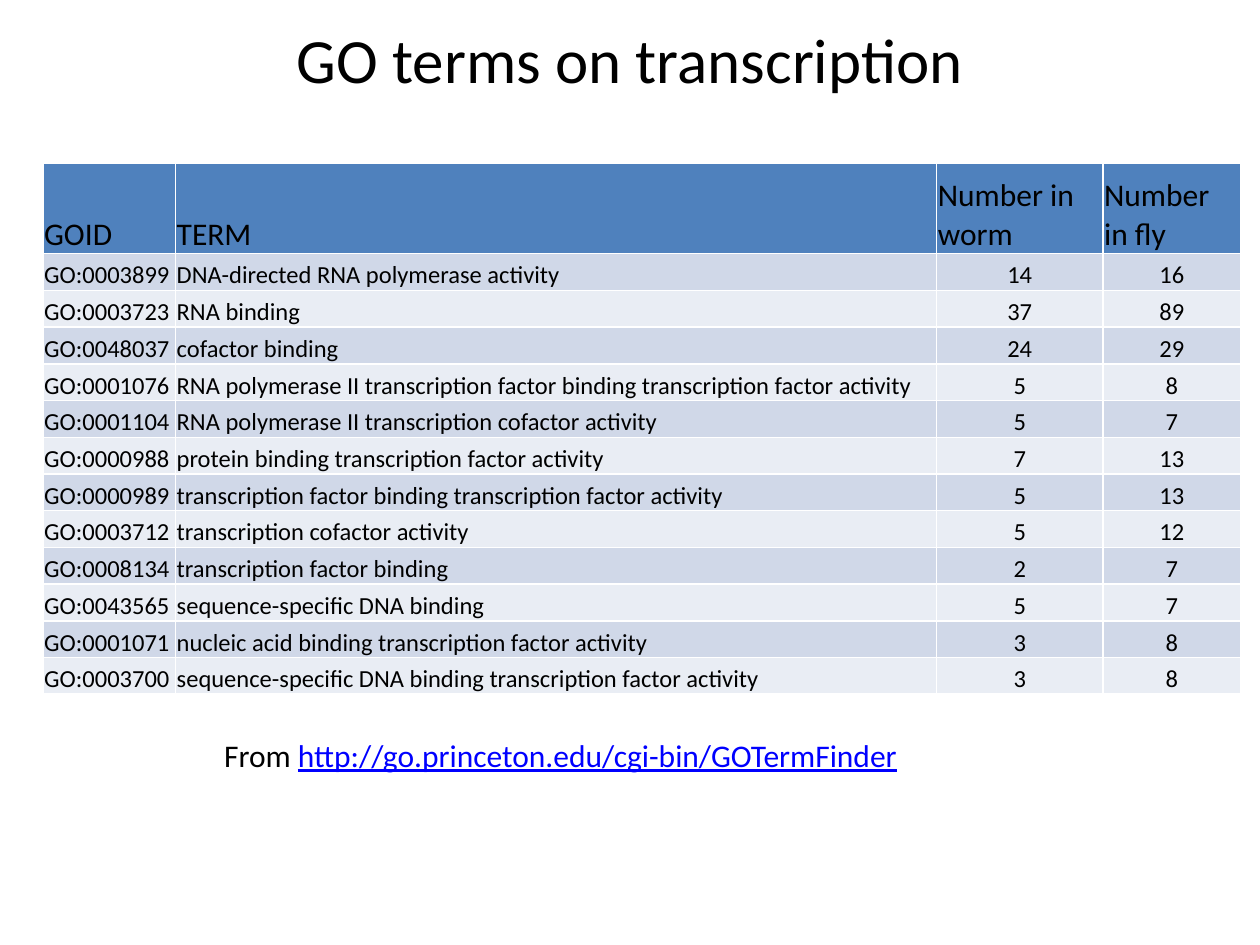
import pptx
import pptx.dml.color
import pptx.enum.text
import pptx.util

Pt = pptx.util.Pt
ALIGN = pptx.enum.text.PP_ALIGN
ANCHOR = pptx.enum.text.MSO_ANCHOR

COLORS = {
    "text": "000000",
    "link": "0000FF",
    "header": "4F81BD",
    "odd": "D0D8E8",
    "even": "E9EDF4",
}
HEADINGS = ("GOID", "TERM", "Number in worm", "Number in fly")
GO_TERMS = [
    ("GO:0003899", "DNA-directed RNA polymerase activity", 14, 16),
    ("GO:0003723", "RNA binding", 37, 89),
    ("GO:0048037", "cofactor binding", 24, 29),
    ("GO:0001076", "RNA polymerase II transcription factor binding transcription factor activity", 5, 8),
    ("GO:0001104", "RNA polymerase II transcription cofactor activity", 5, 7),
    ("GO:0000988", "protein binding transcription factor activity", 7, 13),
    ("GO:0000989", "transcription factor binding transcription factor activity", 5, 13),
    ("GO:0003712", "transcription cofactor activity", 5, 12),
    ("GO:0008134", "transcription factor binding", 2, 7),
    ("GO:0043565", "sequence-specific DNA binding", 5, 7),
    ("GO:0001071", "nucleic acid binding transcription factor activity", 3, 8),
    ("GO:0003700", "sequence-specific DNA binding transcription factor activity", 3, 8),
]


class SlideBuilder:
    """Holds the text style and the slide being built."""

    def __init__(self, slide, font_name):
        self.slide = slide
        self.font_name = font_name

    def color(self, name):
        return pptx.dml.color.RGBColor.from_string(COLORS[name])

    def run(self, paragraph, text, size, color="text", underline=False):
        run = paragraph.add_run()
        run.text = text
        run.font.name = self.font_name
        run.font.size = Pt(size)
        run.font.bold = False
        run.font.underline = underline
        run.font.color.rgb = self.color(color)

    def title(self, text, left, top, width, height, size):
        shape = self.slide.shapes.title
        shape.left, shape.top = Pt(left), Pt(top)
        shape.width, shape.height = Pt(width), Pt(height)
        shape.text_frame.vertical_anchor = ANCHOR.MIDDLE
        paragraph = shape.text_frame.paragraphs[0]
        paragraph.alignment = ALIGN.CENTER
        self.run(paragraph, text, size)

    def cell(self, cell, text, size, fill, alignment):
        cell.margin_left = cell.margin_right = cell.margin_top = Pt(0.75)
        cell.margin_bottom = 0
        cell.vertical_anchor = ANCHOR.BOTTOM
        cell.fill.solid()
        cell.fill.fore_color.rgb = self.color(fill)
        paragraph = cell.text_frame.paragraphs[0]
        paragraph.alignment = alignment
        self.run(paragraph, text, size)

    def table(self, headings, records, left, top, widths, header_height, row_height):
        heights = [header_height] + [row_height] * len(records)
        frame = self.slide.shapes.add_table(
            len(heights), len(widths), Pt(left), Pt(top), Pt(sum(widths)), Pt(sum(heights))
        )
        table = frame.table
        for column, width in zip(table.columns, widths):
            column.width = Pt(width)
        for row, height in zip(table.rows, heights):
            row.height = Pt(height)
        for index, heading in enumerate(headings):
            self.cell(table.cell(0, index), heading, 18, "header", ALIGN.LEFT)
        for row_index, record in enumerate(records, 1):
            fill = "odd" if row_index % 2 else "even"
            for index, value in enumerate(record):
                alignment = ALIGN.CENTER if isinstance(value, int) else ALIGN.LEFT
                self.cell(table.cell(row_index, index), str(value), 14, fill, alignment)

    def source(self, label, address, left, top, width, height, size):
        shape = self.slide.shapes.add_textbox(Pt(left), Pt(top), Pt(width), Pt(height))
        shape.text_frame.word_wrap = True
        paragraph = shape.text_frame.paragraphs[0]
        self.run(paragraph, label, size)
        self.run(paragraph, address, size, "link", True)


def main():
    presentation = pptx.Presentation()
    presentation.slide_width, presentation.slide_height = Pt(720), Pt(540)
    slide = presentation.slides.add_slide(presentation.slide_layouts[5])
    builder = SlideBuilder(slide, "Calibri")
    builder.title("GO terms on transcription", 36, -11.5, 648, 90, 36)
    builder.table(HEADINGS, GO_TERMS, 24.5, 93.25, (75.75, 435, 95, 79), 51.75, 21)
    builder.source(
        "From ", "http://go.princeton.edu/cgi-bin/GOTermFinder", 121, 417, 487.5, 29, 18
    )
    presentation.save("out.pptx")


if __name__ == "__main__":
    main()
